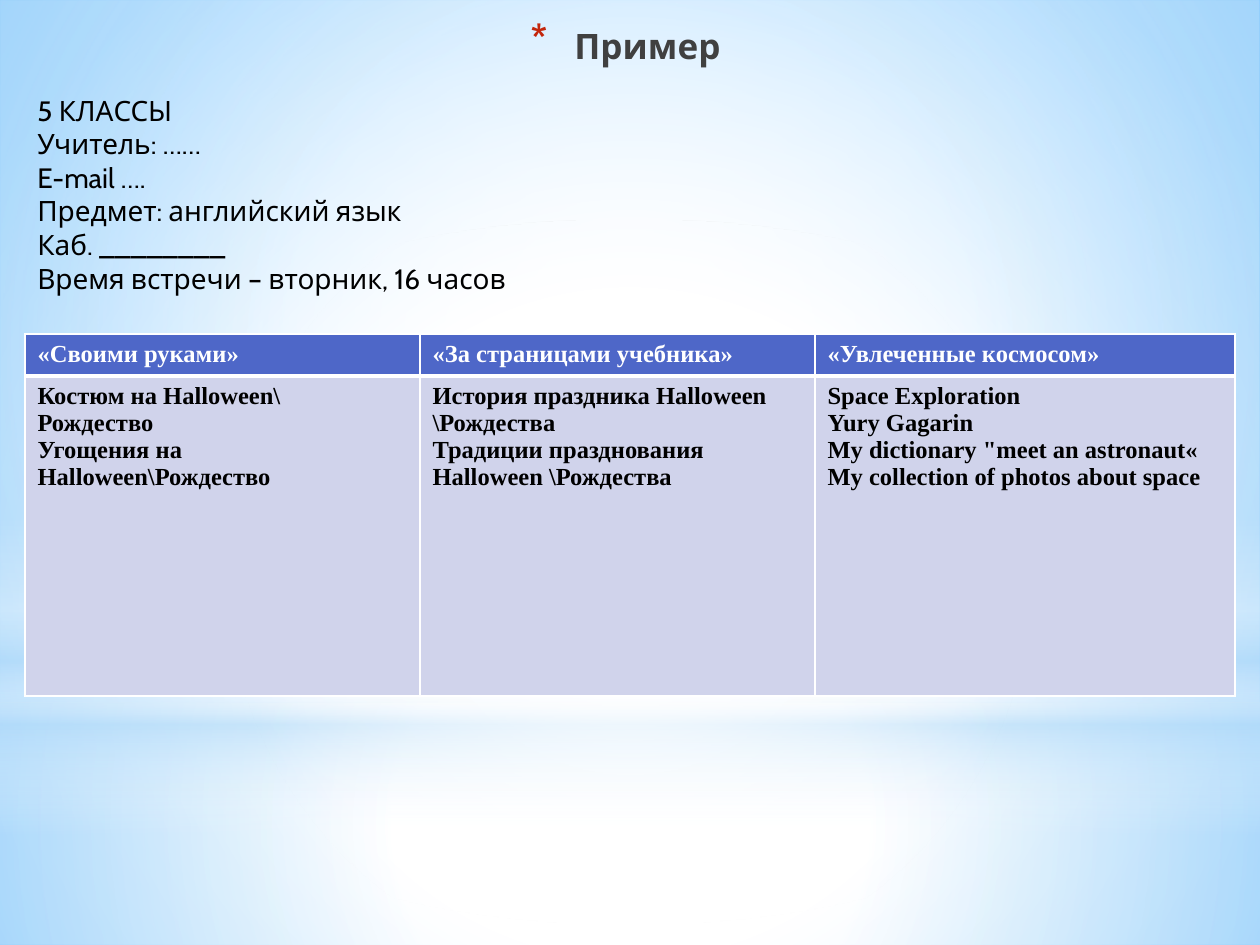
from lxml import etree
from pptx import Presentation
from pptx.dml.color import RGBColor
from pptx.enum.shapes import MSO_SHAPE
from pptx.enum.text import MSO_ANCHOR, PP_ALIGN
from pptx.oxml.ns import qn
from pptx.util import Pt

RECTANGLE, OVAL = MSO_SHAPE.RECTANGLE, MSO_SHAPE.OVAL
CENTER, MIDDLE = PP_ALIGN.CENTER, MSO_ANCHOR.MIDDLE
EMU_PER_PX = 914400 / 126
WIDTH, HEIGHT = 1260, 945

BACKDROP_STOPS = [(0, "FFFFFF", 100), (42, "FFFFFF", 100), (100, "63BCFF", 100)]
BACKDROP_FOCUS = (24, 44, 24, 12)
CENTRE_FOCUS = (50, 50, 50, 50)
GLOW_LAYERS = [
    (RECTANGLE, (0, 703, WIDTH, 242), CENTRE_FOCUS,
     [(0, "FFFFFF", 91), (37, "FFFFFF", 76), (100, "B4DCFA", 79)]),
    (RECTANGLE, (0, 0, WIDTH, 703), CENTRE_FOCUS,
     [(0, "FFFFFF", 89), (48, "FFFFFF", 62), (100, "B4DCFA", 79)]),
    (RECTANGLE, (0, 519, WIDTH, 315), None,
     [(0, "FFFFFF", 0), (29, "FFFFFF", 30), (45, "B4DCFA", 40),
      (55, "FFFFFF", 26), (65, "B4DCFA", 60), (100, "FFFFFF", 0)]),
    (OVAL, (0, 220, WIDTH, 703), CENTRE_FOCUS,
     [(0, "FFFFFF", 100), (56, "FFFFFF", 0)]),
]

TITLE_FORMAT = {"name": "Cabin", "size": Pt(20), "bold": True}
DETAILS_FORMAT = {"name": "Cabin", "size": Pt(16)}
TABLE_FORMAT = {"name": "Times New Roman", "size": Pt(14), "bold": True}

CLASS_DETAILS = [
    "5 КЛАССЫ",
    "Учитель: ……",
    "E-mail ….",
    "Предмет: английский язык",
    "Каб. ________",
    "Время встречи – вторник, 16 часов",
]
PROJECTS = [
    ("«Своими руками»", 395,
     ["Костюм на Halloween\\", "Рождество", "Угощения на Halloween\\Рождество"]),
    ("«За страницами учебника»", 395,
     ["История праздника Halloween \\Рождества",
      "Традиции празднования Halloween \\Рождества"]),
    ("«Увлеченные космосом»", 420,
     ["Space Exploration", "Yury Gagarin", 'My dictionary "meet an astronaut«',
      "My collection of photos about space"]),
]


def px(length):
    return round(length * EMU_PER_PX)


def place(box):
    return [px(length) for length in box]


def colour(value):
    return RGBColor.from_string(value)


def add_node(parent, tag, **attributes):
    node = etree.SubElement(parent, qn(tag))
    for key, value in attributes.items():
        node.set(key, str(value))
    return node


def set_gradient(fill, holder, stops, focus):
    fill.solid()
    solid = holder.find(qn("a:solidFill"))
    gradient = etree.Element(qn("a:gradFill"), rotWithShape="1")
    stop_list = add_node(gradient, "a:gsLst")
    for position, value, opacity in stops:
        stop = add_node(stop_list, "a:gs", pos=position * 1000)
        shade = add_node(stop, "a:srgbClr", val=value)
        if opacity < 100:
            add_node(shade, "a:alpha", val=opacity * 1000)
    if focus:
        radial = add_node(gradient, "a:path", path="circle")
        add_node(radial, "a:fillToRect",
                 **{side: share * 1000 for side, share in zip("ltrb", focus)})
    else:
        add_node(gradient, "a:lin", ang=90 * 60000, scaled=0)
    holder.replace(solid, gradient)


def write_lines(frame, lines, font_format, value):
    frame.word_wrap = True
    for index, line in enumerate(lines):
        paragraph = frame.add_paragraph() if index else frame.paragraphs[0]
        run = paragraph.add_run()
        run.text = line
        run.font.color.rgb = colour(value)
        for key, setting in font_format.items():
            setattr(run.font, key, setting)


def add_backdrop(slide):
    background = slide.background.fill
    background.solid()
    holder = slide.element.find(".//" + qn("p:bgPr"))
    set_gradient(background, holder, BACKDROP_STOPS, BACKDROP_FOCUS)
    for preset, box, focus, stops in GLOW_LAYERS:
        glow = slide.shapes.add_shape(preset, *place(box))
        glow.shadow.inherit = False
        glow.line.fill.background()
        set_gradient(glow.fill, glow.element.spPr, stops, focus)


def add_title(slide, box):
    frame = slide.shapes.add_textbox(*place(box)).text_frame
    frame.vertical_anchor = MIDDLE
    write_lines(frame, ["Пример"], TITLE_FORMAT, "404040")
    heading = frame.paragraphs[0]
    heading.alignment = CENTER
    properties = heading._p.get_or_add_pPr()
    properties.set("marL", str(px(44)))
    properties.set("indent", str(-px(44)))
    bullet_colour = add_node(properties, "a:buClr")
    add_node(bullet_colour, "a:srgbClr", val="C3260C")
    add_node(properties, "a:buSzPct", val=128000)
    add_node(properties, "a:buChar", char="*")


def add_details(slide, box):
    frame = slide.shapes.add_textbox(*place(box)).text_frame
    write_lines(frame, CLASS_DETAILS, DETAILS_FORMAT, "000000")


def set_borders(cell, widths):
    properties = cell._tc.get_or_add_tcPr()
    for index, (side, width) in enumerate(zip("LRTB", widths)):
        border = add_node(properties, f"a:ln{side}", w=Pt(width))
        line = add_node(border, "a:solidFill")
        add_node(line, "a:srgbClr", val="FFFFFF")
        properties.insert(index, border)


def fill_cell(cell, lines, text_colour, fill_colour, border_widths):
    cell.fill.solid()
    cell.fill.fore_color.rgb = colour(fill_colour)
    write_lines(cell.text_frame, lines, TABLE_FORMAT, text_colour)
    set_borders(cell, border_widths)


def add_projects(slide, box, header_height):
    table = slide.shapes.add_table(2, len(PROJECTS), *place(box)).table
    table.rows[0].height = px(header_height)
    table.rows[1].height = px(box[3] - header_height)
    for index, (theme, width, topics) in enumerate(PROJECTS):
        table.columns[index].width = px(width)
        fill_cell(table.cell(0, index), [theme], "FFFFFF", "4E67C8", (1, 1, 1, 3))
        fill_cell(table.cell(1, index), topics, "000000", "D0D3EB", (1, 1, 3, 1))


def main():
    deck = Presentation()
    deck.slide_width, deck.slide_height = px(WIDTH), px(HEIGHT)
    slide = deck.slides.add_slide(deck.slide_layouts[6])
    add_backdrop(slide)
    add_title(slide, (25, 16, 1201, 59))
    add_details(slide, (25, 87, 1186, 251))
    add_projects(slide, (25, 334, 1210, 361), 41)
    deck.save("out.pptx")


if __name__ == "__main__":
    main()
